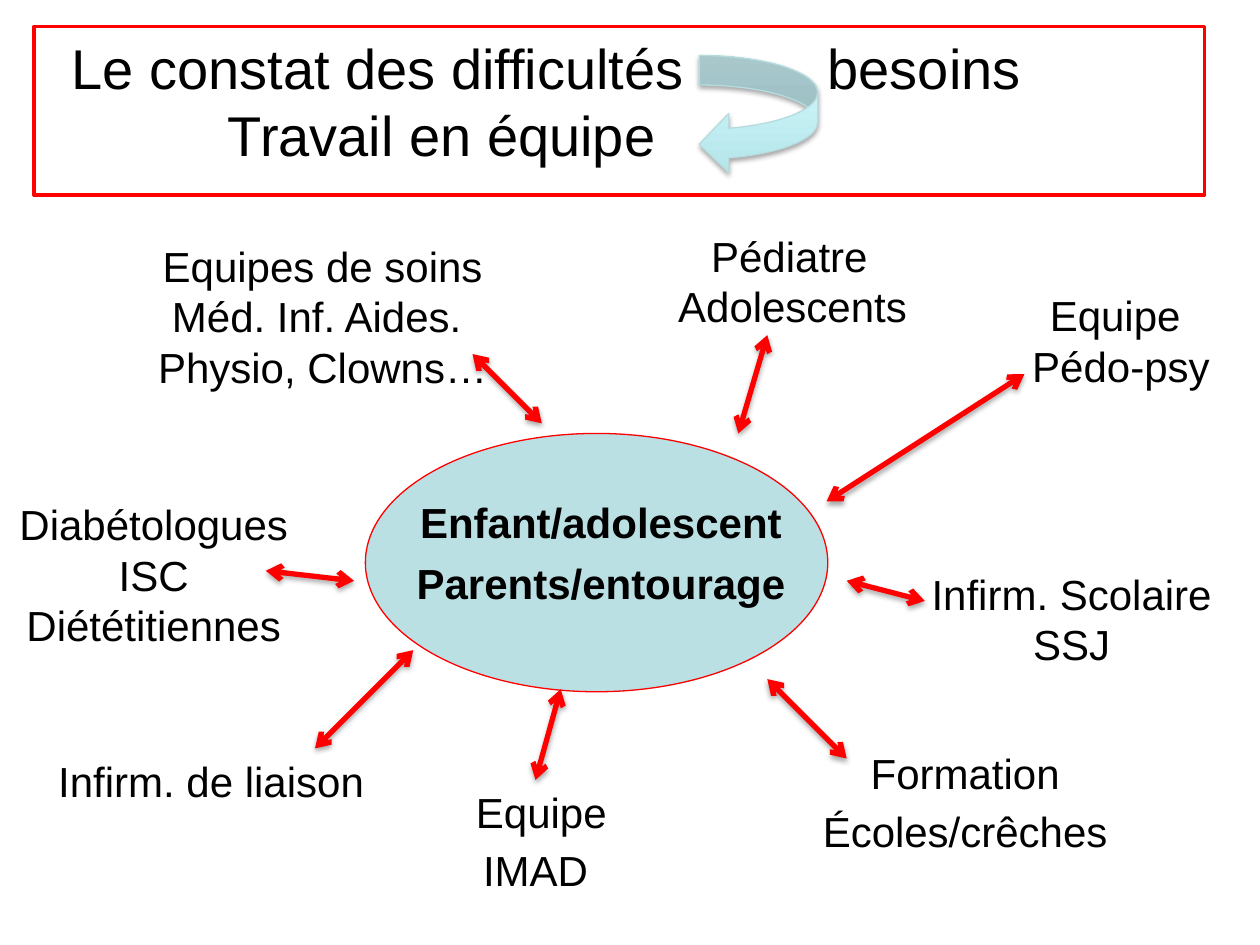
from dataclasses import dataclass

from lxml import etree
from pptx import Presentation
from pptx import util as u
from pptx.dml.color import RGBColor
from pptx.enum import shapes, text
from pptx.oxml import ns


@dataclass(frozen=True)
class Theme:
    font: str = "Arial"
    ink: str = "000000"
    red: str = "FF0000"
    oval: str = "BBE0E3"
    curve_line: str = "B6DCDF"
    curve_fill: tuple = ("B5E5E9", "D3FBFF")
    title_size: int = 32
    body_size: int = 24


THEME = Theme()
CENTER, LEFT = text.PP_ALIGN.CENTER, text.PP_ALIGN.LEFT

# Content: boxes are (left, top, width, height) in inches
TITLE_BOX = (0.47, 0.21, 8.98, 1.18)
TITLE_LINES = [("Le constat des difficultés\tbesoins", 6), ("\tTravail en équipe", 1.24)]
FRAME_BOX = (0.27, 0.21, 9.29, 1.34)
CURVE_BOX = (5.55, 0.44, 0.94, 0.94)
OVAL_BOX = (2.9, 3.44, 3.67, 2.05)

FAMILY = dict(box=(2.92, 3.89, 3.7, 1.17), bold=True, gap=6,
              lines=["Enfant/adolescent", "Parents/entourage"])
PARTNERS = [
    dict(box=(3.34, 6.19, 1.82, 1.02), lines=[" Equipe", "IMAD"], gap=4.8),
    dict(box=(0.35, 5.95, 2.65, 0.5), lines=["Infirm. de liaison"], wrap=False),
    dict(box=(6.42, 5.88, 2.48, 0.99), lines=["Formation", "Écoles/crêches"],
         gap=4.8, wrap=False),
    dict(box=(7.03, 4.46, 2.95, 0.91), lines=["Infirm. Scolaire", "SSJ"]),
    dict(box=(7.99, 2.25, 1.72, 0.91), lines=["Equipe", " Pédo-psy"], wrap=False),
    dict(box=(0.75, 1.86, 3.62, 1.31),
         lines=["Equipes de soins", "Méd. Inf. Aides. ", "Physio, Clowns…"]),
    dict(box=(5.21, 1.78, 2.11, 0.91), lines=["Pédiatre", " Adolescents"],
         wrap=False, last_align=LEFT),
    dict(box=(0.04, 3.91, 2.36, 1.31),
         lines=["Diabétologues", "ISC", "Diététitiennes"], wrap=False),
]
ARROWS = [  # start x, start y, end x, end y
    (6.09, 5.39, 6.72, 6.02),
    (4.45, 5.47, 4.25, 6.19),
    (2.5, 5.94, 3.28, 5.16),
    (2.11, 4.53, 2.81, 4.61),
    (3.75, 2.81, 4.3, 3.36),
    (6.72, 4.61, 7.34, 4.77),
    (6.56, 3.98, 8.13, 2.97),
    (6.09, 2.66, 5.86, 3.44),
]


def inches(values):
    return [u.Inches(value) for value in values]


def color(value):
    return RGBColor.from_string(value)


def add_child(parent, tag, **attributes):
    return etree.SubElement(parent, ns.qn(tag), attributes)


def add_shadow(shape):
    effects = add_child(shape._element.spPr, "a:effectLst")
    shadow = add_child(effects, "a:outerShdw", blurRad=str(u.Pt(3.1)),
                       dist=str(u.Pt(1.8)), dir="5400000", rotWithShape="0")
    black = add_child(shadow, "a:srgbClr", val=THEME.ink)
    add_child(black, "a:alpha", val="35000")


def set_line(shape, value, width):
    shape.line.color.rgb = color(value)
    shape.line.width = u.Pt(width)


def add_run(paragraph, words, size, bold=False):
    run = paragraph.add_run()
    run.text = words
    run.font.name = THEME.font
    run.font.size = u.Pt(size)
    run.font.bold = bold
    run.font.color.rgb = color(THEME.ink)


def add_frame(slide, box, wrap=True):
    frame = slide.shapes.add_textbox(*inches(box)).text_frame
    frame.word_wrap = wrap
    return frame


def add_paragraph(frame, index):
    return frame.add_paragraph() if index else frame.paragraphs[0]


def add_label(slide, box, lines, gap=0, wrap=True, bold=False, last_align=CENTER):
    frame = add_frame(slide, box, wrap)
    for index, words in enumerate(lines):
        paragraph = add_paragraph(frame, index)
        paragraph.alignment = last_align if index == len(lines) - 1 else CENTER
        if index and gap:
            paragraph.space_before = u.Pt(gap)
        add_run(paragraph, words, THEME.body_size, bold)


def add_title(slide):
    frame = add_frame(slide, TITLE_BOX)
    frame.vertical_anchor = text.MSO_ANCHOR.MIDDLE
    for index, (words, stop) in enumerate(TITLE_LINES):
        paragraph = add_paragraph(frame, index)
        tabs = add_child(paragraph._p.get_or_add_pPr(), "a:tabLst")
        add_child(tabs, "a:tab", pos=str(u.Inches(stop)), algn="l")
        add_run(paragraph, words, THEME.title_size)


def add_outline(slide, kind, box, width, fill=None):
    shape = slide.shapes.add_shape(kind, *inches(box))
    shape.shadow.inherit = False
    if fill:
        shape.fill.solid()
        shape.fill.fore_color.rgb = color(fill)
    else:
        shape.fill.background()
    set_line(shape, THEME.red, width)


def add_curve(slide):
    shape = slide.shapes.add_shape(shapes.MSO_SHAPE.CURVED_RIGHT_ARROW, *inches(CURVE_BOX))
    shape._element.spPr.xfrm.set("flipH", "1")
    shape.fill.gradient()
    shape.fill.gradient_angle = 90
    for stop, value in zip(shape.fill.gradient_stops, THEME.curve_fill):
        stop.color.rgb = color(value)
    set_line(shape, THEME.curve_line, 0.75)
    add_shadow(shape)


def add_arrow(slide, ends):
    arrow = slide.shapes.add_connector(shapes.MSO_CONNECTOR.STRAIGHT, *inches(ends))
    set_line(arrow, THEME.red, 3)
    for tag in ("a:headEnd", "a:tailEnd"):
        add_child(arrow.line._get_or_add_ln(), tag, type="arrow")
    add_shadow(arrow)


def main():
    presentation = Presentation()
    presentation.slide_width, presentation.slide_height = inches((10, 7.5))
    slide = presentation.slides.add_slide(presentation.slide_layouts[6])

    # Framed title with its curved arrow
    add_title(slide)
    add_outline(slide, shapes.MSO_SHAPE.RECTANGLE, FRAME_BOX, 2)
    add_curve(slide)

    # Partners around the family
    for partner in PARTNERS:
        add_label(slide, **partner)
    add_outline(slide, shapes.MSO_SHAPE.OVAL, OVAL_BOX, 0.75, THEME.oval)
    add_label(slide, **FAMILY)

    # Two-way links
    for ends in ARROWS:
        add_arrow(slide, ends)

    presentation.save("out.pptx")


if __name__ == "__main__":
    main()
